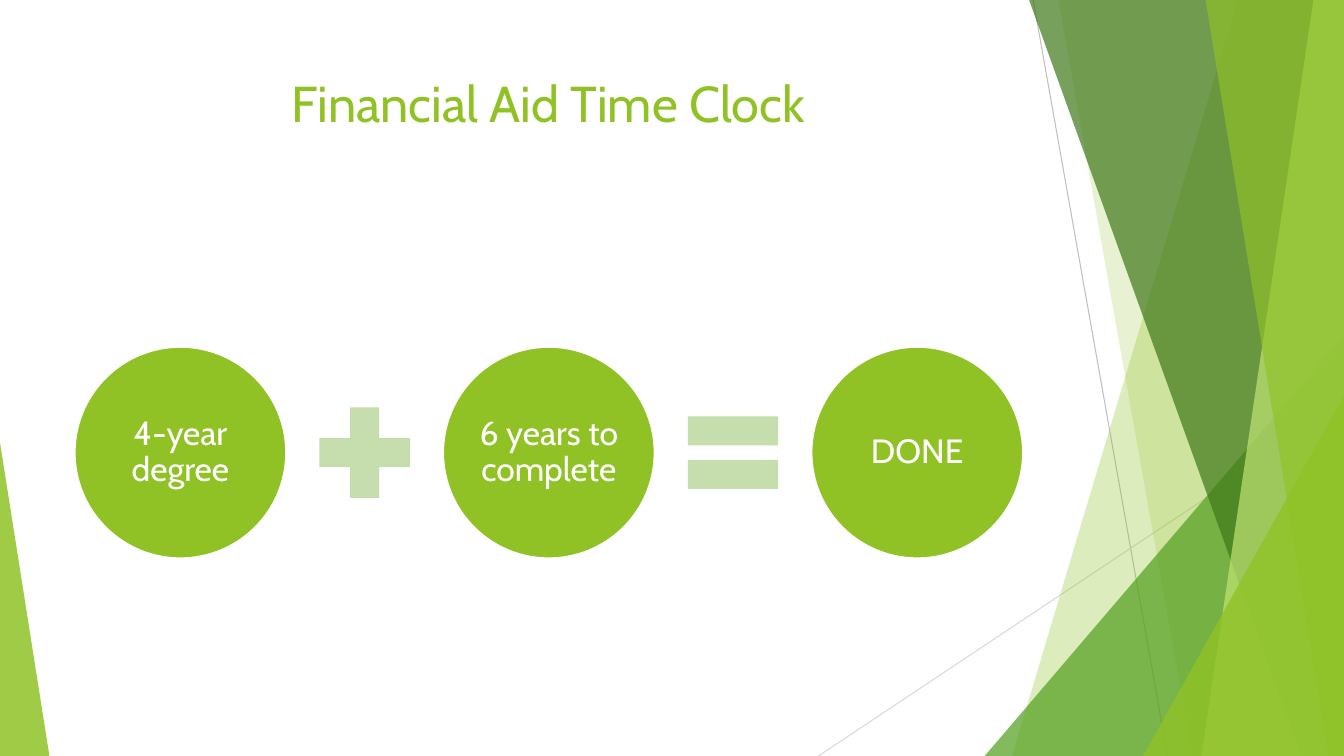
from dataclasses import dataclass

from lxml import etree
from pptx import Presentation
from pptx.dml.color import RGBColor
from pptx.enum.shapes import MSO_CONNECTOR, MSO_SHAPE
from pptx.enum.text import MSO_ANCHOR, MSO_AUTO_SIZE, PP_ALIGN
from pptx.oxml.ns import qn
from pptx.util import Pt

LIME = RGBColor(0x90, 0xC2, 0x26)
GREEN = RGBColor(0x54, 0xA0, 0x21)
FOREST = RGBColor(0x3F, 0x78, 0x19)
PALE_LIME = RGBColor(0xC0, 0xE4, 0x74)
SAGE = RGBColor(0xC6, 0xDD, 0xAD)
GREY = RGBColor(0xBF, 0xBF, 0xBF)
LIGHT_GREY = RGBColor(0xD9, 0xD9, 0xD9)
WHITE = RGBColor(0xFF, 0xFF, 0xFF)

ELLIPSE, TRIANGLE = MSO_SHAPE.OVAL, MSO_SHAPE.ISOSCELES_TRIANGLE
PLUS, EQUAL = MSO_SHAPE.MATH_PLUS, MSO_SHAPE.MATH_EQUAL
STRAIGHT = MSO_CONNECTOR.STRAIGHT
TOP, MIDDLE = MSO_ANCHOR.TOP, MSO_ANCHOR.MIDDLE
CENTER = PP_ALIGN.CENTER
NO_AUTOFIT = MSO_AUTO_SIZE.NONE

WIDTH, HEIGHT = 960, 540
LEFT, MID_Y, PITCH = 53.3, 323.3, 263.15
CIRCLE, OPERATOR = 151.2, 87.8


@dataclass
class Ray:
    x1: float
    y1: float
    x2: float
    y2: float
    color: RGBColor


@dataclass
class Band:
    top_x: float
    bottom_x: float
    color: RGBColor
    opacity: int


@dataclass
class Wedge:
    x: float
    y: float
    w: float
    apex: float
    color: RGBColor
    opacity: int


RAYS = [
    Ray(738, 0, 834, HEIGHT, GREY),
    Ray(WIDTH, 290.2, 584.6, HEIGHT, LIGHT_GREY),
]
FACETS = [
    Band(884.2, 722.9, LIME, 30),
    Band(756, 851.8, LIME, 20),
    Wedge(703.4, 239.8, 256.6, 1, GREEN, 72),
    Band(735.1, 929.5, FOREST, 70),
    Band(938.2, 858.2, PALE_LIME, 70),
    Band(861.1, 949, LIME, 65),
    Wedge(816.5, 283, 143.5, 1, LIME, 80),
    Wedge(0, 316.1, 35.3, 0, LIME, 85),
]
TERMS = ["4-year degree", "6 years to complete", "DONE"]
OPERATORS = [PLUS, EQUAL]


def apply(target, values: dict) -> None:
    for name, value in values.items():
        setattr(target, name, value)


def paint(sp, color: RGBColor, opacity: int = 100) -> None:
    sp.shadow.inherit = False
    sp.line.fill.background()
    sp.fill.solid()
    sp.fill.fore_color.rgb = color
    if opacity < 100:
        clr = sp.fill._xPr.find(qn("a:solidFill"))[0]
        etree.SubElement(clr, qn("a:alpha")).set("val", str(opacity * 1000))


def write(sp, text: str, size: float, color: RGBColor, frame: dict, para: dict) -> None:
    tf = sp.text_frame
    apply(tf, {"word_wrap": True, "auto_size": NO_AUTOFIT, **frame})
    p = tf.paragraphs[0]
    apply(p, {"alignment": CENTER, **para})
    r = p.add_run()
    r.text = text
    apply(r.font, {"name": "Cabin", "size": Pt(size)})
    r.font.color.rgb = color


def draw_ray(shapes, ray: Ray) -> None:
    line = shapes.add_connector(STRAIGHT, Pt(ray.x1), Pt(ray.y1), Pt(ray.x2), Pt(ray.y2))
    line.line.color.rgb = ray.color
    line.line.width = Pt(0.75)
    etree.SubElement(line._element.spPr, qn("a:effectLst"))


def draw_band(shapes, band: Band) -> None:
    fb = shapes.build_freeform(Pt(band.top_x), 0)
    corners = [(WIDTH, 0), (WIDTH, HEIGHT), (band.bottom_x, HEIGHT)]
    fb.add_line_segments([(Pt(x), Pt(y)) for x, y in corners], close=True)
    paint(fb.convert_to_shape(), band.color, band.opacity)


def draw_wedge(shapes, wedge: Wedge) -> None:
    sp = shapes.add_shape(TRIANGLE, Pt(wedge.x), Pt(wedge.y), Pt(wedge.w), Pt(HEIGHT - wedge.y))
    sp.adjustments[0] = wedge.apex
    paint(sp, wedge.color, wedge.opacity)


def add_centered(shapes, kind, mid_x: float, size: float, color: RGBColor):
    sp = shapes.add_shape(kind, Pt(mid_x - size / 2), Pt(MID_Y - size / 2), Pt(size), Pt(size))
    paint(sp, color)
    return sp


def draw_equation(shapes) -> None:
    first_mid = LEFT + CIRCLE / 2
    margins = {f"margin_{side}": Pt(2.2) for side in ("left", "top", "right", "bottom")}
    for i, term in enumerate(TERMS):
        mid_x = first_mid + i * PITCH
        sp = add_centered(shapes, ELLIPSE, mid_x, CIRCLE, LIME)
        sp.line.color.rgb = WHITE
        sp.line.width = Pt(1.5)
        write(sp, term, 24, WHITE, {"vertical_anchor": MIDDLE, **margins}, {"line_spacing": 0.9})
        if i < len(OPERATORS):
            add_centered(shapes, OPERATORS[i], mid_x + PITCH / 2, OPERATOR, SAGE)


def main() -> None:
    prs = Presentation()
    apply(prs, {"slide_width": Pt(WIDTH), "slide_height": Pt(HEIGHT)})
    s = prs.slides.add_slide(prs.slide_layouts[5])
    for ray in RAYS:
        draw_ray(s.shapes, ray)
    for facet in FACETS:
        if isinstance(facet, Band):
            draw_band(s.shapes, facet)
        else:
            draw_wedge(s.shapes, facet)
    title = s.shapes.title
    apply(title, {"left": Pt(53.3), "top": Pt(48.2), "width": Pt(676.8), "height": Pt(103.7)})
    write(title, "Financial Aid Time Clock", 36, LIME, {"vertical_anchor": TOP}, {})
    draw_equation(s.shapes)
    prs.save("out.pptx")


if __name__ == "__main__":
    main()
